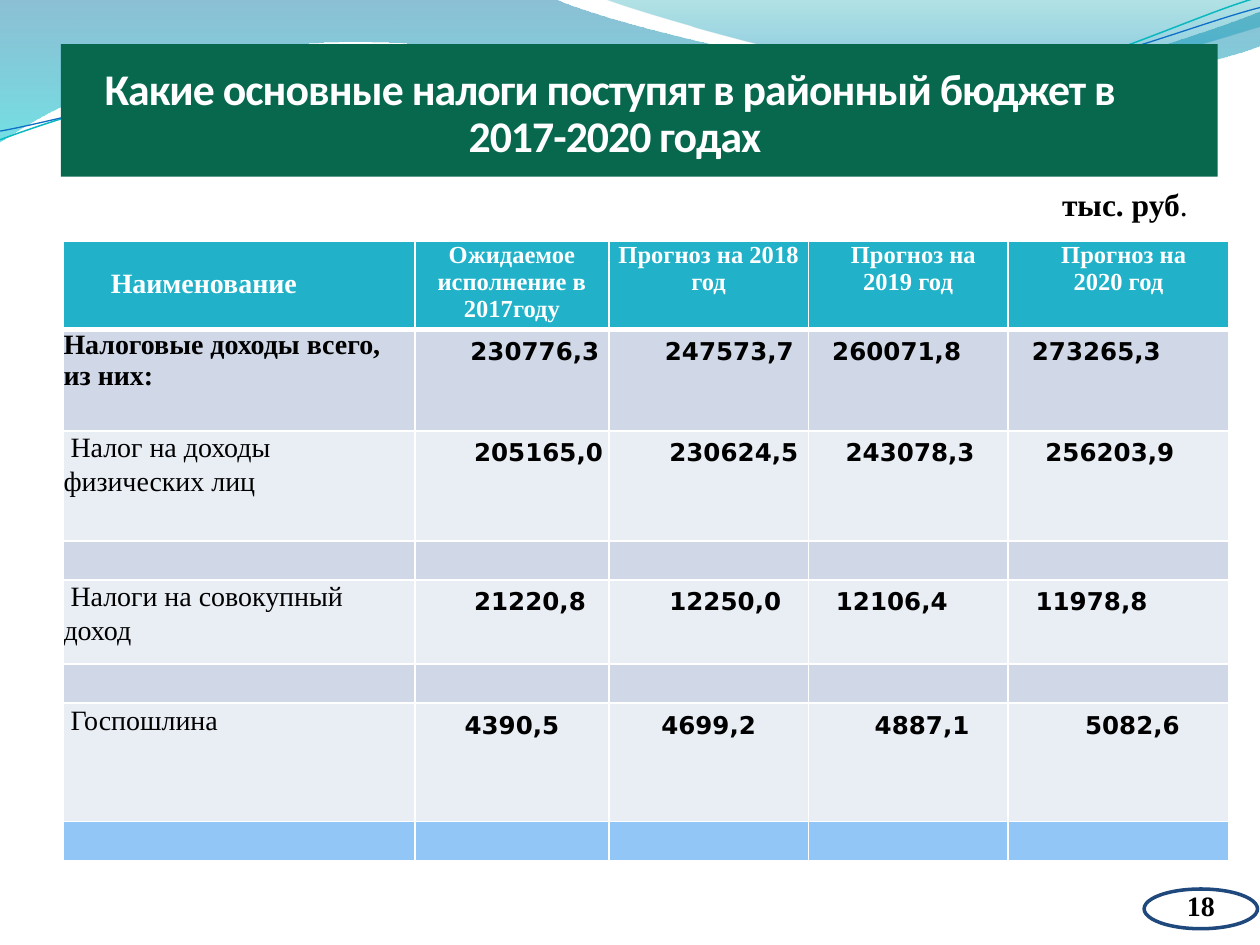
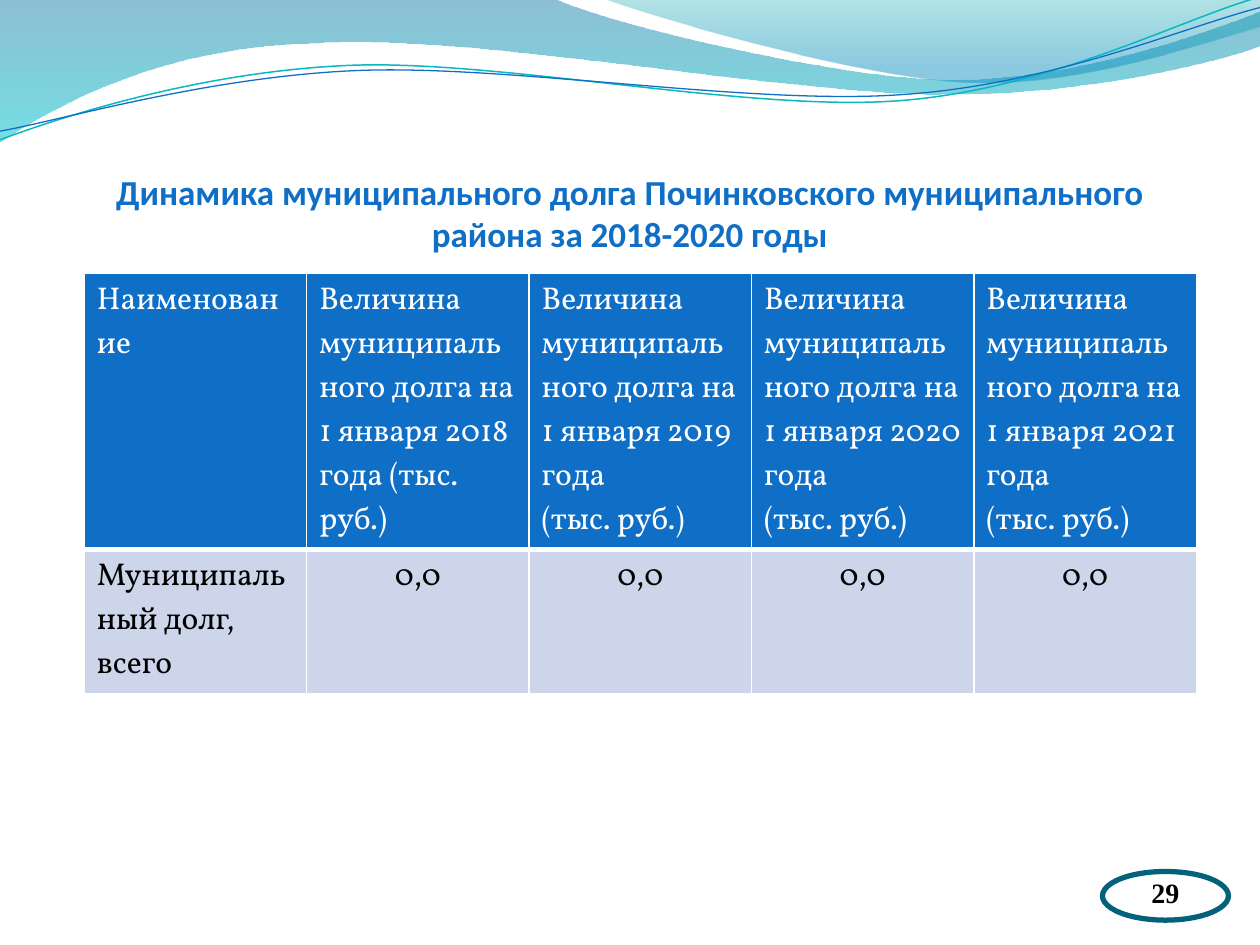
from lxml import etree
from pptx import Presentation
from pptx.dml.color import RGBColor
from pptx.enum.shapes import MSO_SHAPE
from pptx.enum.text import MSO_ANCHOR, MSO_AUTO_SIZE, PP_ALIGN
from pptx.oxml.ns import qn
from pptx.util import Pt

LEFT, CENTER = PP_ALIGN.LEFT, PP_ALIGN.CENTER
BOTTOM, MIDDLE = MSO_ANCHOR.BOTTOM, MSO_ANCHOR.MIDDLE
NO_FIT = MSO_AUTO_SIZE.NONE
RECTANGLE, OVAL = MSO_SHAPE.RECTANGLE, MSO_SHAPE.OVAL

COLORS = {
    "white": "FFFFFF", "black": "000000", "blue": "0F6FC6", "band": "08684E",
    "tax_head": "21B2C9", "tax_dark": "D0D8E8", "tax_light": "E9EDF4",
    "tax_end": "91C6F7", "debt_row": "CCD5EA", "navy": "1F487C",
    "petrol": "04617B", "teal_line": "0AB8BF", "wave_top": "0074A1",
    "wave_bottom": "00C6CF", "crest_top": "00A1A9", "crest_bottom": "008BBF",
}
COLORS = {name: RGBColor.from_string(value) for name, value in COLORS.items()}
TITLE_FONT, SERIF, FIGURES, DEBT_FONT = "Calibri", "Times New Roman", "DejaVu Sans", "Vollkorn"


def add_run(paragraph, text, font, size, color, bold=False):
    run = paragraph.add_run()
    run.text = text
    run.font.name, run.font.size, run.font.bold = font, Pt(size), bold
    run.font.color.rgb = COLORS[color]
    return run


def style_cell(cell, fill, top=1, bottom=1):
    """White borders first, since the fill has to follow them in the XML."""
    tc_pr = cell._tc.get_or_add_tcPr()
    for side, width in (("L", 1), ("R", 1), ("T", top), ("B", bottom)):
        border = etree.SubElement(tc_pr, qn(f"a:ln{side}"), w=str(Pt(width)))
        solid = etree.SubElement(border, qn("a:solidFill"))
        etree.SubElement(solid, qn("a:srgbClr"), val=str(COLORS["white"]))
    cell.fill.solid()
    cell.fill.fore_color.rgb = COLORS[fill]


prs = Presentation()
prs.slide_width, prs.slide_height = Pt(720), Pt(540)
title_only = prs.slide_layouts[5]
taxes = prs.slides.add_slide(title_only)
debt = prs.slides.add_slide(title_only)

# Waves on the master: start, then segments (2 numbers: straight, 6: cubic curve)
wave_fills = [
    ((0, 0), [(316.8, -0.7), (342.7, 12.2, 478.1, 45.4, 545.8, 45.4),
              (614.2, 45.4, 689.8, 18.7, 720, 6.5), (720.7, 25.9),
              (707.8, 31.7, 626.4, 54.7, 537.1, 54),
              (447.8, 54, 275, 20.2, 185, 24.5),
              (92.2, 25.9, 33.1, 59.8, -0.7, 81.4)],
     [(0, "wave_top", 45), (1, "wave_bottom", 55)]),
    ((344.9, -0.7), [(366.5, 7.9, 491, 44.6, 553.7, 46.8),
                     (616.3, 49.7, 691.9, 23, 720, 15.1), (720, 0)],
     [(0, "crest_top", 30), (0.8, "crest_bottom", 45)]),
]
wave_lines = [
    ((0, 79.9), [(34.6, 67, 113.8, 41, 199.4, 37.4),
                 (284.4, 33.8, 427, 64.1, 513.4, 57.6),
                 (599.8, 51.1, 675.4, 10.8, 718.6, -1.4)], ("teal_line", 0.85)),
    ((0, 74.9), [(33.8, 69.1, 118.1, 43.9, 203.8, 40.3),
                 (290.2, 36.7, 429.8, 60.5, 516.2, 54),
                 (601.9, 48.2, 677.5, 15.1, 720, 4.3)], ("blue", 0.75)),
]
master_tree = prs.slide_master.element.cSld.spTree
for order, (start, segments, look) in enumerate(wave_fills + wave_lines):
    filled = order < len(wave_fills)
    outline = taxes.shapes.build_freeform(Pt(start[0]), Pt(start[1]))
    outline.add_line_segments([(Pt(s[-2]), Pt(s[-1])) for s in segments], close=filled)
    wave = outline.convert_to_shape()
    wave.shadow.inherit = False
    # Straight steps become cubic curves, in coordinates local to the shape
    for step, segment in zip(list(wave.element.iter(qn("a:lnTo"))), segments):
        if len(segment) == 6:
            curve = etree.Element(qn("a:cubicBezTo"))
            for x, y in zip(segment[::2], segment[1::2]):
                etree.SubElement(curve, qn("a:pt"), x=str(Pt(x) - wave.left),
                                 y=str(Pt(y) - wave.top))
            step.getparent().replace(step, curve)
    if filled:
        wave.line.fill.background()
        wave.fill.gradient()
        wave.fill.gradient_angle = 270
        for stop, (position, color, _) in zip(wave.fill.gradient_stops, look):
            stop.position = position
            stop.color.rgb = COLORS[color]
        for stop_xml, (_, _, opacity) in zip(wave.element.iter(qn("a:gs")), look):
            etree.SubElement(stop_xml[0], qn("a:alpha"), val=str(opacity * 1000))
    else:
        wave.fill.background()
        wave.line.color.rgb = COLORS[look[0]]
        wave.line.width = Pt(look[1])
    master_tree.insert(2 + order, wave.element)

# Green band behind the first title
band = taxes.shapes.add_shape(RECTANGLE, Pt(34.8), Pt(25.2), Pt(661), Pt(75.8))
band.shadow.inherit = False
band.fill.solid()
band.fill.fore_color.rgb = COLORS["band"]
band.line.fill.background()
taxes.element.cSld.spTree.insert(2, band.element)

# Titles
for slide, text, box, top_inset, size, color, align in (
    (taxes, "Какие основные налоги поступят в районный бюджет в 2017-2020 годах",
     (43.2, 18, 633.6, 74.2), 19.4, 25, "white", LEFT),
    (debt, "Динамика муниципального долга Починковского муниципального района "
     "за 2018-2020 годы", (36, 55.4, 648, 90), 3.6, 20, "blue", CENTER),
):
    title = slide.shapes.title
    title.left, title.top, title.width, title.height = map(Pt, box)
    frame = title.text_frame
    frame.auto_size, frame.word_wrap, frame.vertical_anchor = NO_FIT, True, BOTTOM
    frame.margin_left = frame.margin_right = frame.margin_bottom = 0
    frame.margin_top = Pt(top_inset)
    heading = frame.paragraphs[0]
    heading.alignment = align
    heading_run = add_run(heading, text, TITLE_FONT, size, color, True)
    if slide is taxes:
        heading.line_spacing = Pt(27)
        heading_run.font._element.set("spc", "-55")
        # The hanging indent centres the second line by eye
        heading_pr = heading._p.get_or_add_pPr()
        heading_pr.set("marL", str(Pt(224.6)))
        heading_pr.set("indent", str(Pt(-208)))

# Page numbers
for slide, number, box, color, width in (
    (taxes, "18", (653.8, 508, 64.8, 22.7), "navy", 2),
    (debt, "29", (630, 498, 72, 27.8), "petrol", 3),
):
    page = slide.shapes.add_shape(OVAL, *map(Pt, box))
    page.shadow.inherit = False
    page.fill.solid()
    page.fill.fore_color.rgb = COLORS["white"]
    page.line.color.rgb = COLORS[color]
    page.line.width = Pt(width)
    frame = page.text_frame
    frame.margin_left = frame.margin_right = frame.margin_top = 0
    frame.margin_bottom = Pt(4)
    frame.vertical_anchor = MIDDLE
    frame.paragraphs[0].alignment = CENTER
    add_run(frame.paragraphs[0], number, SERIF, 16, "black", True)

# Tax table: heading row, then (fill, height, label, values, left margins)
tax_heads = [("Наименование", 27, 0), ("Ожидаемое исполнение в 2017году", 11.5, 11.5),
             ("Прогноз на 2018 год", 0, 0), ("Прогноз на 2019 год", 13, 13),
             ("Прогноз на 2020 год", 13, 13)]
blank = [""] * 4
tax_rows = [
    ("tax_dark", 57.8, "Налоговые доходы всего, из них:",
     ["230776,3", "247573,7", "260071,8", "273265,3"], [31.7, 32, 13.7, 13.7]),
    ("tax_light", 62.9, "Налог на доходы физических лиц",
     ["205165,0", "230624,5", "243078,3", "256203,9"], [33.8, 34.5, 21.4, 21.4]),
    ("tax_dark", 22.3, "", blank, [0] * 4),
    ("tax_light", 48.2, "Налоги на совокупный доход",
     ["21220,8", "12250,0", "12106,4", "11978,8"], [33.8, 34.5, 15.8, 15.8]),
    ("tax_dark", 22.3, "", blank, [0] * 4),
    ("tax_light", 67.7, "Госпошлина",
     ["4390,5", "4699,2", "4887,1", "5082,6"], [0, 0, 16, 16]),
    ("tax_end", 22.3, "", blank, [0] * 4),
]
tax_table = taxes.shapes.add_table(8, 5, Pt(36.3), Pt(138), Pt(666), Pt(353.9)).table
tax_table.first_row = tax_table.horz_banding = False
for column, width in zip(tax_table.columns, (200.8, 110.9, 113.9, 114.1, 126.3)):
    column.width = Pt(width)
for cell in tax_table.iter_cells():
    cell.margin_left = cell.margin_right = cell.margin_top = cell.margin_bottom = 0

tax_table.rows[0].height = Pt(50.4)
for col, (text, left, right) in enumerate(tax_heads):
    cell = tax_table.cell(0, col)
    style_cell(cell, "tax_head", bottom=3)
    cell.margin_left, cell.margin_right = Pt(left), Pt(right)
    head = cell.text_frame.paragraphs[0]
    if col == 0:
        cell.margin_top = Pt(15.4)
    else:
        head.alignment = CENTER
    if col > 2:
        head._p.get_or_add_pPr().set("indent", str(Pt(6)))
    add_run(head, text, SERIF, 14 if col else 16, "white", True)

for row, (fill, height, label, values, lefts) in enumerate(tax_rows, 1):
    tax_table.rows[row].height = Pt(height)
    is_total = row == 1
    for col, (text, left) in enumerate(zip([label] + values, [0] + lefts)):
        cell = tax_table.cell(row, col)
        style_cell(cell, fill, top=3 if is_total else 1)
        cell.margin_left = Pt(left)
        if not text:
            continue
        line = cell.text_frame.paragraphs[0]
        if col:
            line.line_spacing = Pt(21.1)
            line.alignment = CENTER if label == "Госпошлина" else LEFT
            add_run(line, text, FIGURES, 14, "black", True)
        else:
            cell.margin_right = Pt(10)
            if not is_total:
                line.line_spacing = Pt(19)
                line._p.get_or_add_pPr().set("indent", str(Pt(4)))
            add_run(line, text, SERIF, 16, "black", is_total)

# Unit above the tax table
unit = taxes.shapes.add_textbox(Pt(599.8), Pt(102.2), Pt(95.8), Pt(28.8)).text_frame
unit.word_wrap = True
add_run(unit.paragraphs[0], "тыс. руб", SERIF, 18, "black", True)
add_run(unit.paragraphs[0], ".", SERIF, 18, "black")

# Debt table: each cell is a list of paragraphs
debt_heads = [["Наименование"],
              ["Величина муниципального долга на 1 января 2018 года (тыс. руб.)"]]
debt_heads += [[f"Величина муниципального долга на 1 января {year} года", "(тыс. руб.)"]
               for year in (2019, 2020, 2021)]
debt_values = [["Муниципальный долг, всего"]] + [["0,0"]] * 4
debt_table = debt.shapes.add_table(2, 5, Pt(48.2), Pt(156.2), Pt(635.5), Pt(228)).table
debt_table.first_row = debt_table.horz_banding = False
for column in debt_table.columns:
    column.width = Pt(127.1)
for row, (cells, height, fill, color, bottom) in enumerate((
    (debt_heads, 149.2, "blue", "white", 3), (debt_values, 78.8, "debt_row", "black", 1),
)):
    debt_table.rows[row].height = Pt(height)
    for col, lines in enumerate(cells):
        cell = debt_table.cell(row, col)
        style_cell(cell, fill, bottom=bottom)
        frame = cell.text_frame
        for index, text in enumerate(lines):
            line = frame.add_paragraph() if index else frame.paragraphs[0]
            line.alignment = CENTER if row and col else LEFT
            add_run(line, text, DEBT_FONT, 18, color)

prs.save("out.pptx")
